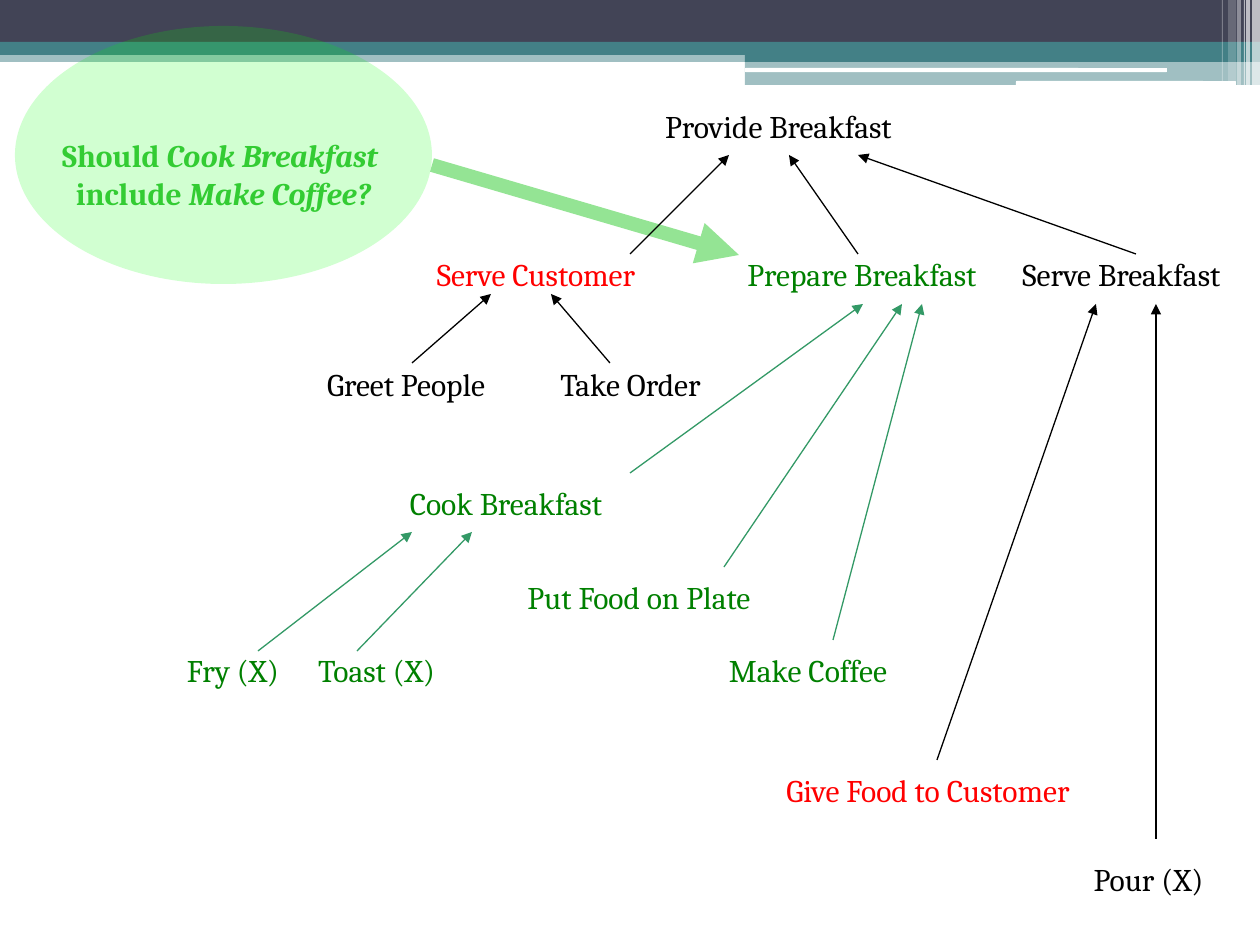
from lxml.etree import SubElement
from pptx import Presentation
from pptx.dml.color import RGBColor
from pptx.enum.shapes import MSO_CONNECTOR as Connector, MSO_SHAPE as Shape
from pptx.enum.text import MSO_ANCHOR as Anchor, PP_ALIGN as Align
from pptx.oxml.ns import qn
from pptx.util import Pt

PX = 914400 / 126
FONT = "Cambria"
COLORS = {
    "black": "000000", "white": "FFFFFF", "red": "FF0000", "green": "008000",
    "sea": "339966", "slate": "424456", "teal": "438086",
    "bubble": "00FF00", "question": "33CC33", "pointer": "94E494",
}


def add_block(kind, left, top, width, height, color, opacity=100):
    shape = slide.shapes.add_shape(
        kind, *(round(v * PX) for v in (left, top, width, height)))
    shape.shadow.inherit = False
    shape.line.fill.background()
    shape.fill.solid()
    shape.fill.fore_color.rgb = RGBColor.from_string(COLORS[color])
    if opacity < 100:
        rgb = shape.fill._xPr.find(".//" + qn("a:srgbClr"))
        SubElement(rgb, qn("a:alpha"), val=str(opacity * 1000))
    return shape


def add_arrow(start, end, color, width=0.75):
    arrow = slide.shapes.add_connector(
        Connector.STRAIGHT, *(round(v * PX) for v in start + end))
    arrow.line.color.rgb = RGBColor.from_string(COLORS[color])
    arrow.line.width = Pt(width)
    SubElement(arrow.line._get_or_add_ln(), qn("a:tailEnd"), type="triangle")
    SubElement(arrow._element.spPr, qn("a:effectLst"))


presentation = Presentation()
presentation.slide_width = round(1260 * PX)
presentation.slide_height = round(945 * PX)
slide = presentation.slides.add_slide(presentation.slide_layouts[6])

# Header bands
for left, top, width, height, color, opacity in [
    (0, 50, 1260, 12, "teal", 50),
    (0, 0, 1260, 42, "slate", 100),
    (0, 42, 1260, 13, "teal", 100),
    (745, 49, 515, 13, "teal", 100),
    (745, 61, 515, 24, "teal", 50),
]:
    add_block(Shape.RECTANGLE, left, top, width, height, color, opacity)

# White header rules
for left, top, width, height in [(745, 68, 422, 4), (1016, 81, 220, 5)]:
    add_block(Shape.ROUNDED_RECTANGLE, left, top, width, height, "white")

# Translucent stripes in the corner
for left, width, height, opacity in [
    (1252, 8, 86, 65), (1246, 4, 86, 65), (1244, 1, 86, 60),
    (1237, 4, 86, 40), (1228, 8, 81, 20), (1222, 1, 81, 30),
]:
    add_block(Shape.RECTANGLE, left, 0, width, height, "white", opacity)

# Question bubble, its text set a little below the middle
bubble = add_block(Shape.OVAL, 15, 26, 417, 258, "bubble", 18)
frame = bubble.text_frame
frame.word_wrap = False
frame.vertical_anchor = Anchor.MIDDLE
frame.margin_top = round(44 * PX)
question = [("Should ", "Cook Breakfast "), ("include ", "Make Coffee?")]
for index, (lead, task) in enumerate(question):
    paragraph = frame.add_paragraph() if index else frame.paragraphs[0]
    paragraph.alignment = Align.CENTER
    paragraph.font.size = Pt(18)
    paragraph.font.name = FONT
    paragraph.font.bold = True
    paragraph.font.color.rgb = RGBColor.from_string(COLORS["question"])
    paragraph.add_run().text = lead
    run = paragraph.add_run()
    run.text = task
    run.font.italic = True
add_arrow((432, 165), (739, 255), "pointer", 8)

# Goals and tasks, without side margins so that each stays on one line
for text, left, top, width, color in [
    ("Provide Breakfast", 640, 96, 277, "black"),
    ("Serve Customer", 412, 244, 248, "red"),
    ("Prepare Breakfast", 738, 244, 248, "green"),
    ("Serve Breakfast", 983, 244, 277, "black"),
    ("Greet People", 302, 354, 208, "black"),
    ("Take Order", 536, 354, 189, "black"),
    ("Cook Breakfast", 382, 473, 248, "green"),
    ("Put Food on Plate", 515, 567, 248, "green"),
    ("Fry (X)", 129, 640, 208, "green"),
    ("Toast (X)", 238, 640, 277, "green"),
    ("Make Coffee", 684, 640, 248, "green"),
    ("Give Food to Customer", 759, 760, 338, "red"),
    ("Pour (X)", 1037, 849, 223, "black"),
]:
    label = slide.shapes.add_textbox(
        *(round(v * PX) for v in (left, top, width, 59)))
    frame = label.text_frame
    frame.word_wrap = False
    frame.margin_left = frame.margin_right = 0
    frame.vertical_anchor = Anchor.MIDDLE
    paragraph = frame.paragraphs[0]
    paragraph.text = text
    paragraph.alignment = Align.CENTER
    paragraph.font.size = Pt(18)
    paragraph.font.name = FONT
    paragraph.font.color.rgb = RGBColor.from_string(COLORS[color])

# Arrows from each task up to its parent
for start, end, color in [
    ((630, 254), (729, 155), "black"),
    ((858, 254), (789, 155), "black"),
    ((1136, 254), (858, 155), "black"),
    ((412, 363), (491, 294), "black"),
    ((610, 363), (551, 294), "black"),
    ((937, 760), (1096, 304), "black"),
    ((1156, 839), (1156, 304), "black"),
    ((630, 473), (863, 304), "sea"),
    ((724, 567), (902, 304), "sea"),
    ((833, 640), (922, 304), "sea"),
    ((258, 651), (412, 532), "sea"),
    ((357, 651), (472, 532), "sea"),
]:
    add_arrow(start, end, color)

presentation.save("out.pptx")
